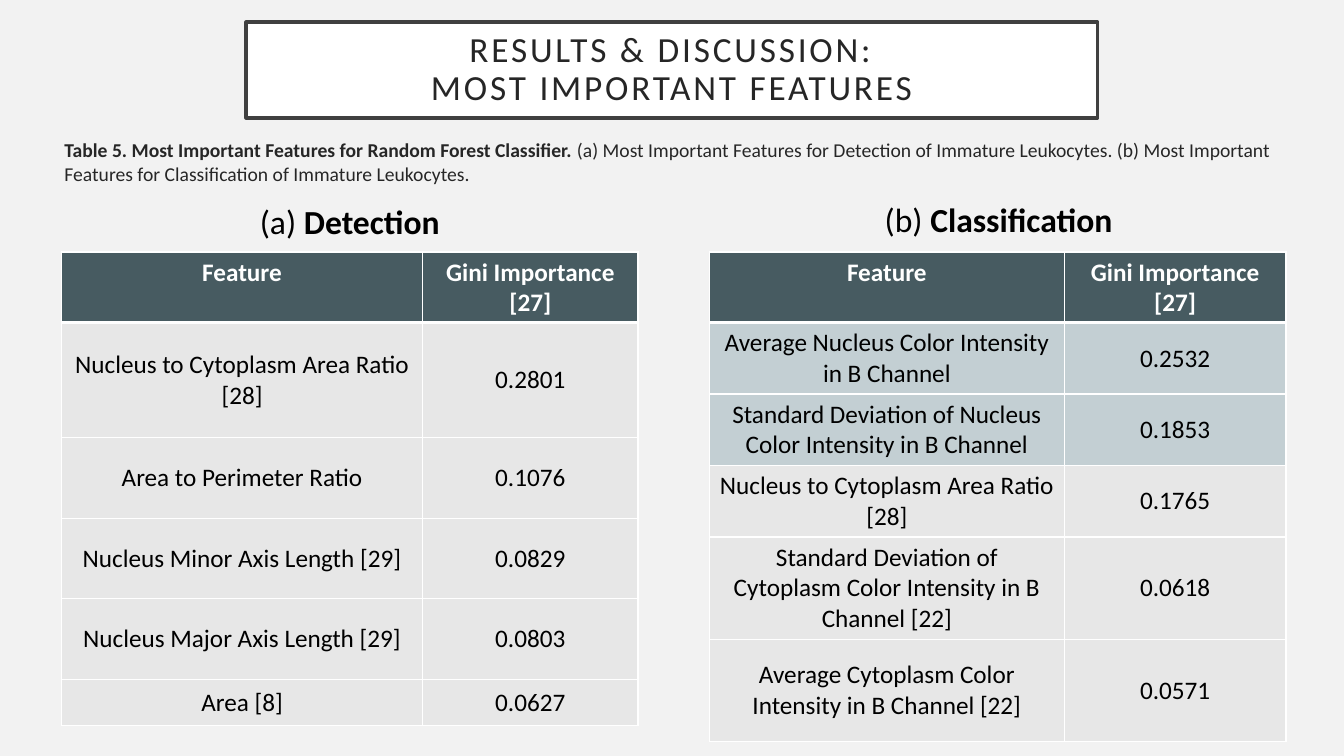
"""Build the slide on the most important features of the random forest classifier."""
from lxml.etree import SubElement
from pptx import Presentation
from pptx.dml.color import RGBColor
from pptx.enum.text import MSO_ANCHOR as Anchor, MSO_AUTO_SIZE as AutoSize, PP_ALIGN as Align
from pptx.oxml.ns import qn
from pptx.util import Cm, Pt

BACKDROP = RGBColor(0xF2, 0xF2, 0xF2)
WHITE = RGBColor(0xFF, 0xFF, 0xFF)
BLACK = RGBColor(0x00, 0x00, 0x00)
INK = RGBColor(0x26, 0x26, 0x26)
FRAME = RGBColor(0x40, 0x40, 0x40)
SLATE = RGBColor(0x47, 0x5B, 0x61)
HIGHLIGHT = RGBColor(0xC3, 0xCF, 0xD3)
PALE = RGBColor(0xE7, 0xE7, 0xE7)


def write(paragraph, text, size=18, color=BLACK, bold=False, align=Align.CENTER, tracking=0):
    paragraph.alignment = align
    for number, line in enumerate(text.split("\n")):
        if number:
            paragraph.add_line_break()
        run = paragraph.add_run()
        run.text = line
        run.font.name = "Calibri"
        run.font.size = Pt(size)
        run.font.bold = bold
        run.font.color.rgb = color
        run.font._element.set("spc", str(tracking * 100))


def draw_borders(cell, widths):
    properties = cell._tc.get_or_add_tcPr()
    for side, width in zip("LRTB", widths):
        border = SubElement(properties, qn(f"a:ln{side}"), w=str(Pt(width)))
        fill = SubElement(border, qn("a:solidFill"))
        SubElement(fill, qn("a:srgbClr"), val=str(WHITE))


deck = Presentation()
deck.slide_width, deck.slide_height = Cm(33.87), Cm(19.05)
slide = deck.slides.add_slide(deck.slide_layouts[1])
slide.background.fill.solid()
slide.background.fill.fore_color.rgb = BACKDROP

heading = slide.shapes.title
heading.left, heading.top, heading.width, heading.height = Cm(6.2), Cm(0.56), Cm(21.46), Cm(2.41)
heading.fill.solid()
heading.fill.fore_color.rgb = WHITE
heading.line.color.rgb = FRAME
heading.line.width = Pt(2.5)
heading_text = heading.text_frame
heading_text.auto_size = AutoSize.NONE
heading_text.vertical_anchor = Anchor.MIDDLE
heading_text.margin_left = heading_text.margin_right = Cm(0.5)
heading_text.margin_top = heading_text.margin_bottom = Cm(0.5)
heading_text.paragraphs[0].line_spacing = 0.9
write(heading_text.paragraphs[0], "RESULTS & DISCUSSION:\nMOST IMPORTANT FEATURES",
      size=25.2, color=INK, tracking=2)

caption = slide.placeholders[1]
caption.left, caption.top, caption.width, caption.height = Cm(1.37), Cm(3.35), Cm(31.27), Cm(1.52)
caption.text_frame.auto_size = AutoSize.NONE
caption_line = caption.text_frame.paragraphs[0]
caption_line.space_before = Pt(10)
caption_format = caption_line._p.get_or_add_pPr()
caption_format.set("marL", "0")
caption_format.set("indent", "0")
SubElement(caption_format, qn("a:buNone"))
write(caption_line, "Table 5. Most Important Features for Random Forest Classifier.",
      size=14, color=INK, bold=True, align=Align.LEFT)
write(caption_line, " (a) Most Important Features for Detection of Immature Leukocytes."
      " (b) Most Important Features for Classification of Immature Leukocytes.",
      size=14, color=INK, align=Align.LEFT)

DETECTION = [
    ("Nucleus to Cytoplasm Area Ratio [28]", "0.2801"),
    ("Area to Perimeter Ratio", "0.1076"),
    ("Nucleus Minor Axis Length [29]", "0.0829"),
    ("Nucleus Major Axis Length [29]", "0.0803"),
    ("Area [8]", "0.0627"),
]
CLASSIFICATION = [
    ("Average Nucleus Color Intensity in B Channel", "0.2532"),
    ("Standard Deviation of Nucleus Color Intensity in B Channel", "0.1853"),
    ("Nucleus to Cytoplasm Area Ratio [28]", "0.1765"),
    ("Standard Deviation of Cytoplasm Color Intensity in B Channel [22]", "0.0618"),
    ("Average Cytoplasm Color Intensity in B Channel [22]", "0.0571"),
]
PANELS = [
    ("(a) ", "Detection", (1.55, 4.93, 14.53), 1.55, (9.1, 5.43),
     (1.78, 2.9, 2.03, 2.03, 2.03, 1.17), DETECTION, 0),
    ("(b) ", "Classification", (17, 4.88, 16.33), 17.88, (8.94, 5.59),
     (1.78, 1.8, 1.8, 1.8, 2.58, 2.58), CLASSIFICATION, 2),
]

for letter, task, (left, top, width), table_left, columns, heights, features, highlighted in PANELS:
    label = slide.shapes.add_textbox(Cm(left), Cm(top), Cm(width), Cm(1.28)).text_frame
    label.word_wrap = True
    write(label.paragraphs[0], letter, size=24)
    write(label.paragraphs[0], task, size=24, bold=True)

    ranking = slide.shapes.add_table(len(heights), len(columns), Cm(table_left), Cm(6.35),
                                     Cm(sum(columns)), Cm(sum(heights))).table
    for column, column_width in zip(ranking.columns, columns):
        column.width = Cm(column_width)
    for row, height in zip(ranking.rows, heights):
        row.height = Cm(height)

    for r, entries in enumerate([("Feature", "Gini Importance [27]"), *features]):
        header = r == 0
        shade = SLATE if header else HIGHLIGHT if r <= highlighted else PALE
        for c, entry in enumerate(entries):
            cell = ranking.cell(r, c)
            draw_borders(cell, (1, 1, 3 if r == 1 else 1, 3 if header else 1))
            cell.fill.solid()
            cell.fill.fore_color.rgb = shade
            cell.vertical_anchor = Anchor.TOP if header else Anchor.MIDDLE
            write(cell.text_frame.paragraphs[0], entry,
                  color=WHITE if header else BLACK, bold=header)

deck.save("out.pptx")
